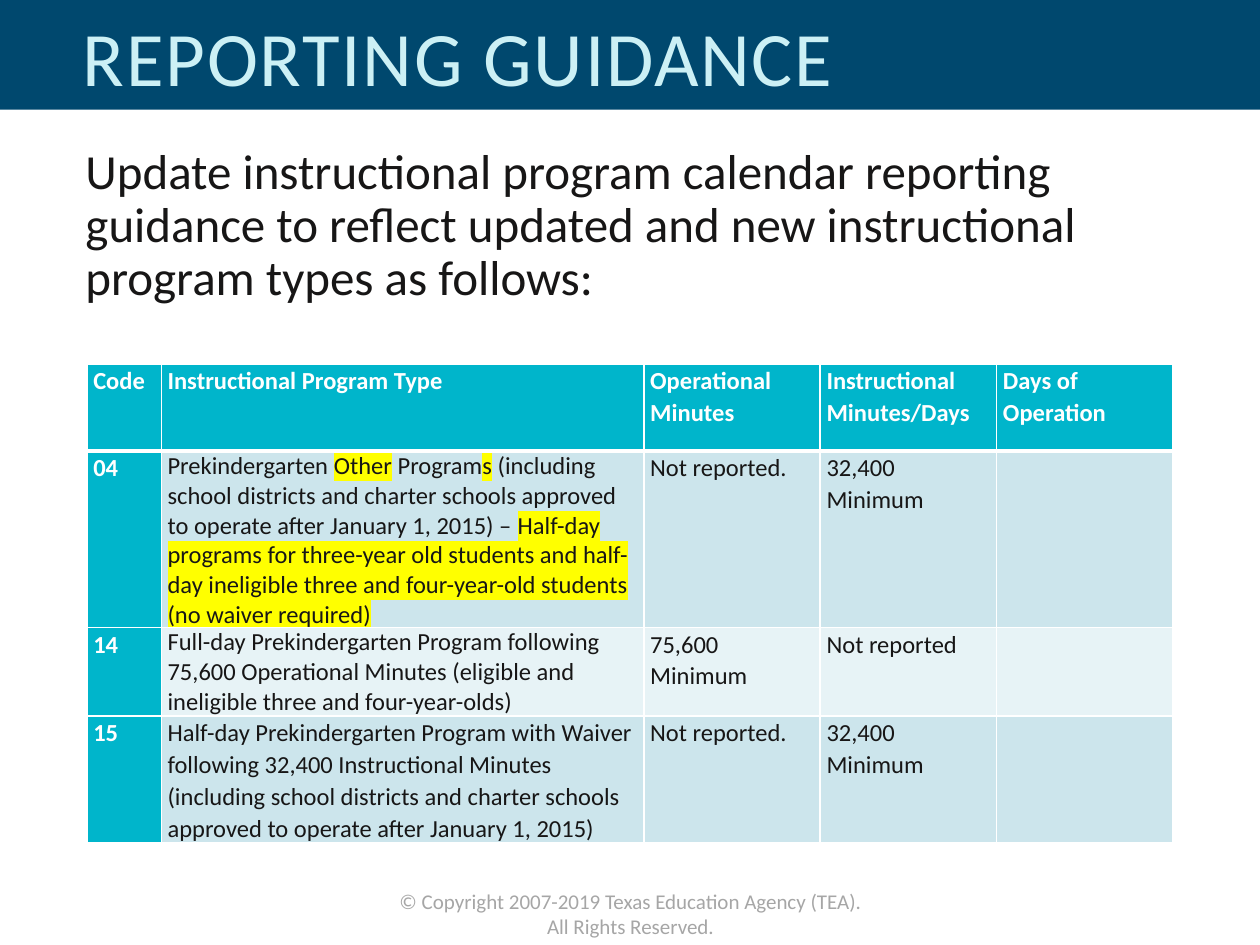
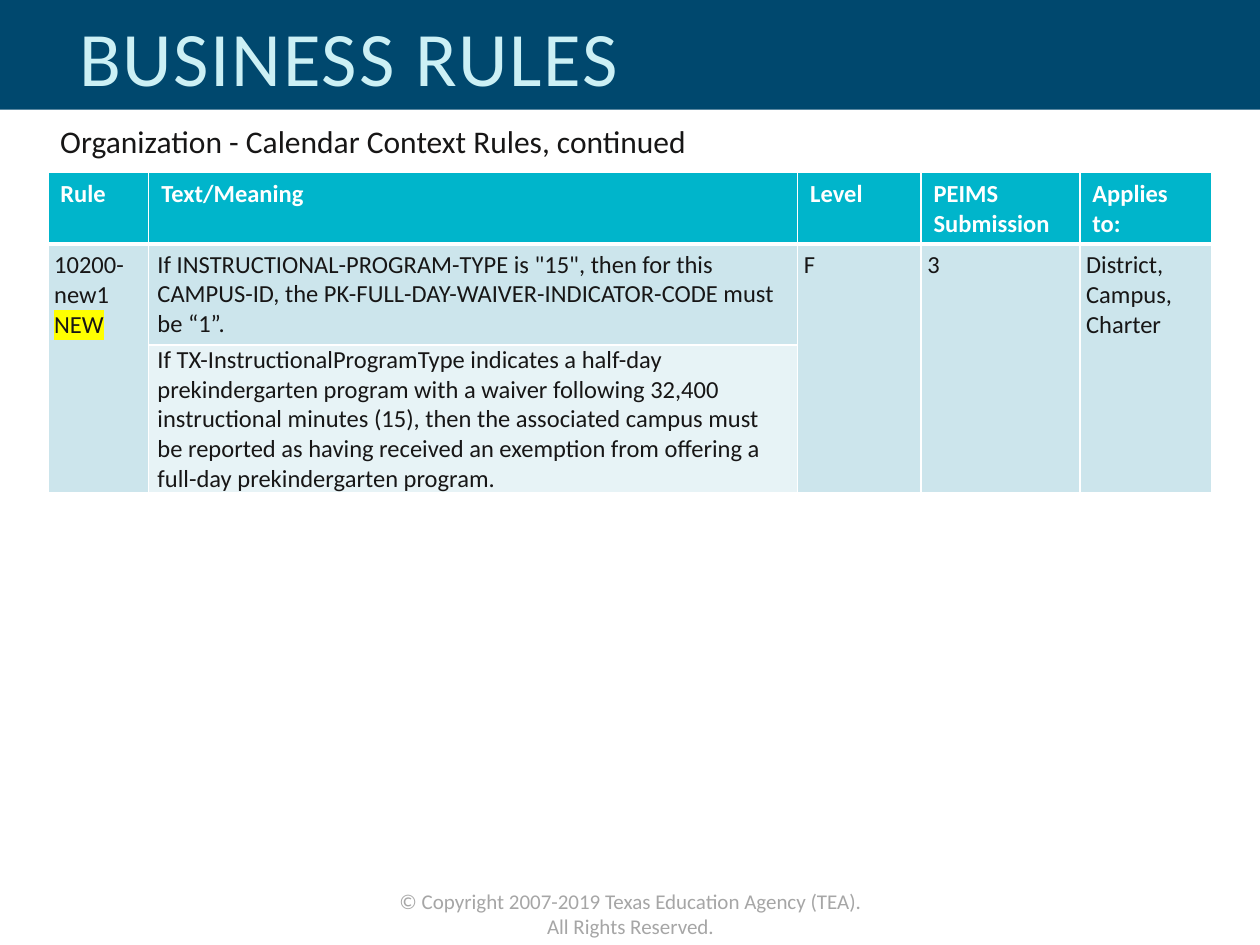
from pptx import Presentation
from pptx.dml.color import RGBColor
from pptx.enum.shapes import MSO_SHAPE
from pptx.enum.text import MSO_ANCHOR, PP_ALIGN
from pptx.oxml.ns import qn
from pptx.util import Inches, Pt
from lxml.etree import SubElement

NAVY = RGBColor(0x00, 0x48, 0x6E)
ICE = RGBColor(0xCC, 0xF0, 0xF5)
TEAL = RGBColor(0x00, 0xB5, 0xCB)
BAND_DARK = RGBColor(0xCC, 0xE5, 0xEC)
BAND_LIGHT = RGBColor(0xE7, 0xF3, 0xF6)
INK = RGBColor(0x17, 0x16, 0x16)
GRAY = RGBColor(0xA6, 0xA6, 0xA6)
WHITE = RGBColor(0xFF, 0xFF, 0xFF)
YELLOW = RGBColor(0xFF, 0xFF, 0x00)

FONT = "Calibri"
SIDES = ("L", "R", "T", "B")
FOOTER = "© Copyright 2007-2019 Texas Education Agency (TEA). All Rights Reserved."

HEADER = {"color": WHITE, "bold": True}
BODY = {"color": INK, "bold": False}
TIGHT = (0.05, 0)
ROOMY = (0.1, 0.05)
EVEN = (0.05, 0.05)
WIDE = (0.07, 0)


def set_attrs(obj, values):
    for name, value in values.items():
        setattr(obj, name, value)


def highlight(r):
    rPr = r.font._element
    mark = SubElement(rPr, qn("a:highlight"))
    SubElement(mark, qn("a:srgbClr")).set("val", str(YELLOW))
    rPr.find(qn("a:solidFill")).addnext(mark)


def write(tf, text, size, color, bold=False, spacing=None, align=None, tracking=None):
    """Lines become paragraphs; parts between bars are highlighted."""
    for i, line in enumerate(text.split("\n")):
        p = tf.add_paragraph() if i else tf.paragraphs[0]
        set_attrs(p, {"line_spacing": spacing, "alignment": align})
        for j, part in enumerate(line.split("|")):
            if not part:
                continue
            r = p.add_run()
            r.text = part
            set_attrs(r.font, {"name": FONT, "size": Pt(size), "bold": bold})
            r.font.color.rgb = color
            if j % 2:
                highlight(r)
            if tracking:
                r.font._element.set("spc", str(tracking))


def add_text(s, box, text, size, color, anchor=MSO_ANCHOR.TOP, **style):
    tf = s.shapes.add_textbox(*map(Inches, box)).text_frame
    set_attrs(tf, {"word_wrap": True, "vertical_anchor": anchor})
    write(tf, text, size, color, **style)


def add_base(prs, title, left, width):
    s = prs.slides.add_slide(prs.slide_layouts[6])
    band = s.shapes.add_shape(MSO_SHAPE.RECTANGLE, 0, 0, prs.slide_width, Inches(0.87))
    band.shadow.inherit = False
    band.fill.solid()
    band.fill.fore_color.rgb = NAVY
    band.line.fill.background()
    add_text(s, (3.04, 7, 3.93, 0.3), FOOTER, 12, GRAY, align=PP_ALIGN.CENTER)
    add_text(s, (left, 0.05, width, 0.87), title, 44, ICE,
             anchor=MSO_ANCHOR.MIDDLE, spacing=0.9, tracking=100)
    return s


def set_borders(cell, widths):
    tcPr = cell._tc.get_or_add_tcPr()
    for i, side in enumerate(SIDES):
        ln = SubElement(tcPr, qn(f"a:ln{side}"))
        ln.set("w", str(Pt(widths.get(side, 1))))
        fill = SubElement(ln, qn("a:solidFill"))
        SubElement(fill, qn("a:srgbClr")).set("val", str(WHITE))
        tcPr.insert(i, ln)


def add_grid(s, left, top, cols, rows):
    frame = s.shapes.add_table(len(rows), len(cols), *map(
        Inches, (left, top, sum(cols), sum(rows))))
    table = frame.table
    for col, width in zip(table.columns, cols):
        col.width = Inches(width)
    for row, height in zip(table.rows, rows):
        row.height = Inches(height)
    return table


def fill_cell(table, row, col, text, fill, inset, style,
              spacing=None, anchor=MSO_ANCHOR.TOP):
    cell = table.cell(row, col)
    x, y = map(Inches, inset)
    set_attrs(cell, {"margin_left": x, "margin_right": x, "margin_top": y,
                     "margin_bottom": y, "vertical_anchor": anchor})
    cell.fill.solid()
    cell.fill.fore_color.rgb = fill
    set_borders(cell, {0: {"B": 3}, 1: {"T": 3}}.get(row, {}))
    write(cell.text_frame, text, 14, spacing=spacing, **style)


def band_fill(row):
    return BAND_DARK if row % 2 else BAND_LIGHT


def add_program_table(s):
    programs = [
        ("Code", "Instructional Program Type", "Operational Minutes",
         "Instructional Minutes/Days", "Days of Operation"),
        ("04", "Prekindergarten |Other| Program|s| (including school districts and "
               "charter schools approved to operate after January 1, 2015) – "
               "|Half-day programs for three-year old students and half-day "
               "ineligible three and four-year-old students (no waiver required)|",
         "Not reported.", "32,400 Minimum", ""),
        ("14", "Full-day Prekindergarten Program following 75,600 Operational "
               "Minutes (eligible and ineligible three and four-year-olds)",
         "75,600 Minimum", "Not reported", ""),
        ("15", "Half-day Prekindergarten Program with Waiver following 32,400 "
               "Instructional Minutes (including school districts and charter "
               "schools approved to operate after January 1, 2015)",
         "Not reported.", "32,400 Minimum", ""),
    ]
    table = add_grid(s, 0.69, 2.89, [0.59, 3.83, 1.4, 1.4, 1.4], [0.69, 1.4, 0.7, 1.01])
    for row, texts in enumerate(programs):
        for col, text in enumerate(texts):
            heading = row == 0 or col == 0
            single = col == 1 and row in (1, 2)
            fill_cell(table, row, col, text, TEAL if heading else band_fill(row),
                      TIGHT, HEADER if heading else BODY, None if single else 1.07)


def add_rule_table(s):
    headings = ("Rule", "Text/Meaning", "Level", "PEIMS\nSubmission", "Applies to:")
    rule = ("10200-new1\n|NEW|",
            'If INSTRUCTIONAL-PROGRAM-TYPE is "15", then for this CAMPUS-ID, '
            "the PK-FULL-DAY-WAIVER-INDICATOR-CODE must be “1”.",
            "F", "3", "District,\nCampus,\nCharter")
    meaning = ("If TX-InstructionalProgramType indicates a half-day prekindergarten "
               "program with a waiver following 32,400 instructional minutes (15), "
               "then the associated campus must be reported as having received an "
               "exemption from offering a full-day prekindergarten program.")
    table = add_grid(s, 0.38, 1.37, [0.8, 5.15, 0.98, 1.26, 1.05], [0.56, 0.8, 1.17])
    for col, (heading, text) in enumerate(zip(headings, rule)):
        is_text = col == 1
        fill_cell(table, 0, col, heading, TEAL, ROOMY, HEADER)
        fill_cell(table, 1, col, text, BAND_DARK, WIDE if is_text else EVEN, BODY,
                  anchor=MSO_ANCHOR.MIDDLE if is_text else MSO_ANCHOR.TOP)
        fill_cell(table, 2, col, meaning if is_text else "",
                  BAND_LIGHT if is_text else BAND_DARK, WIDE, BODY)
        if not is_text:
            table.cell(1, col).merge(table.cell(2, col))


def main():
    prs = Presentation()
    set_attrs(prs, {"slide_width": Inches(10), "slide_height": Inches(7.5)})

    s = add_base(prs, "REPORTING GUIDANCE", 0.56, 8.13)
    add_text(s, (0.58, 1.12, 8.62, 1.5),
             "Update instructional program calendar reporting guidance to reflect "
             "updated and new instructional program types as follows:",
             28, INK, spacing=0.9)
    add_program_table(s)

    s = add_base(prs, "BUSINESS RULES", 0.53, 8.28)
    add_rule_table(s)
    add_text(s, (0.38, 0.92, 8.2, 0.4),
             "Organization - Calendar Context Rules, continued", 18, INK)

    prs.save("out.pptx")


if __name__ == "__main__":
    main()
